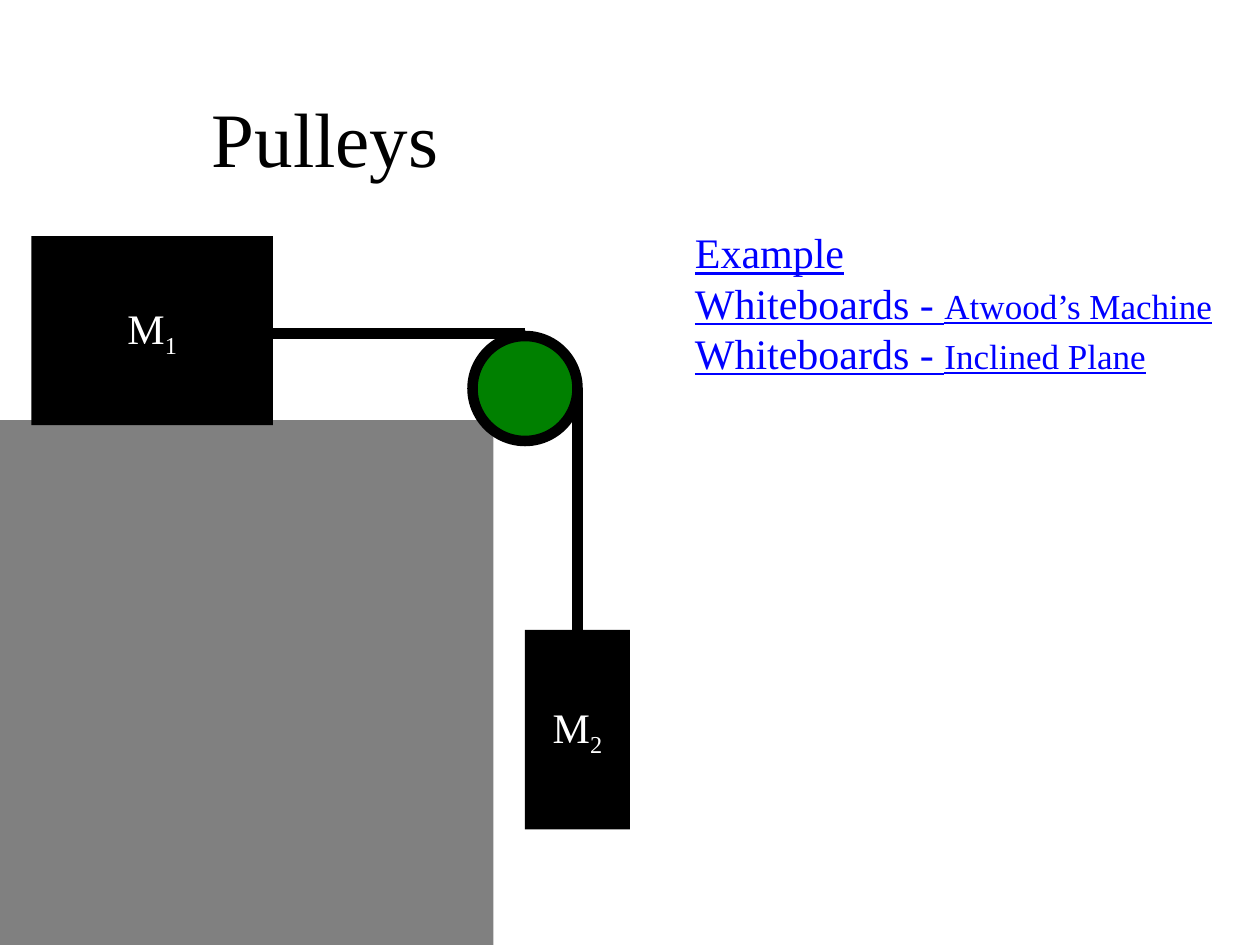
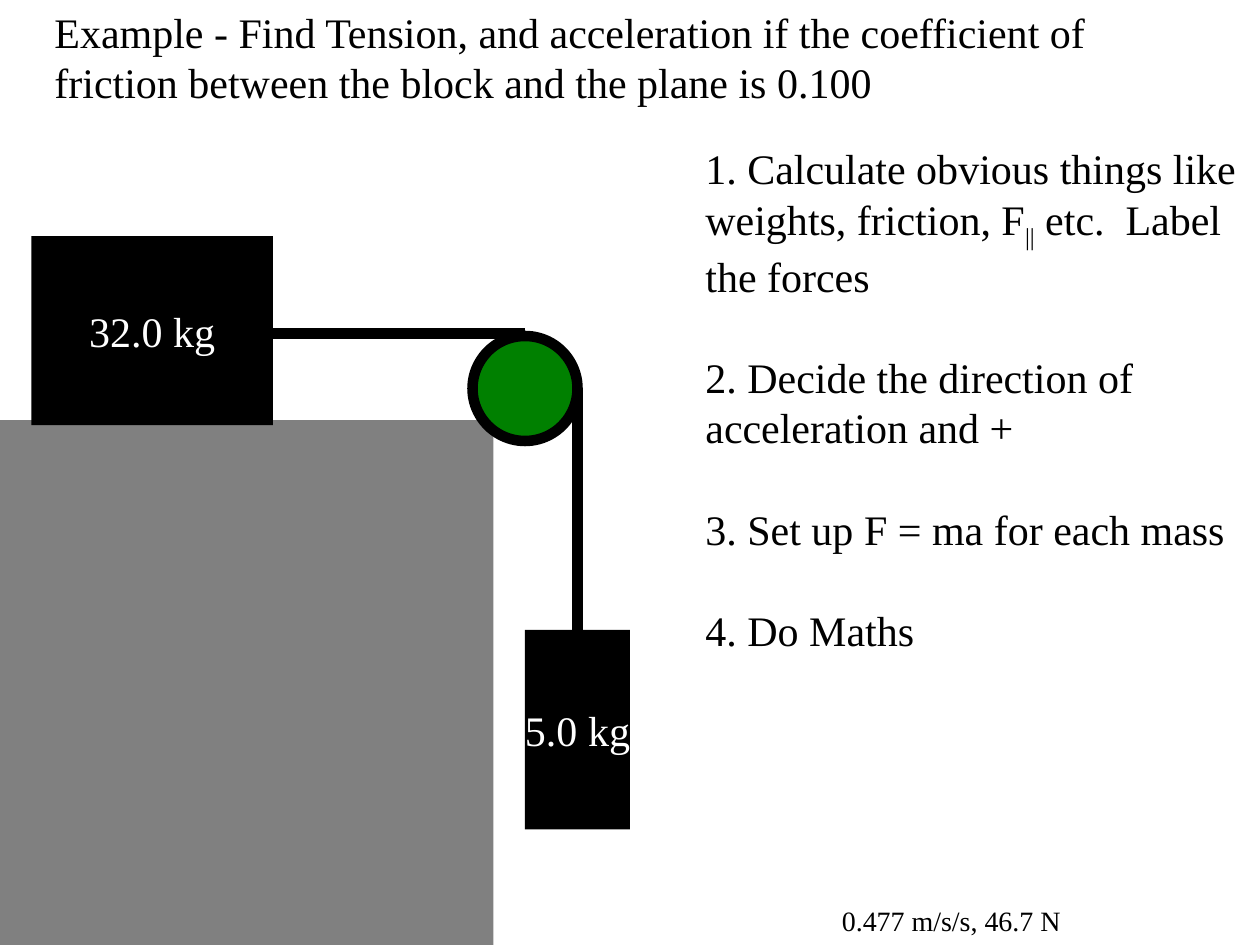
from lxml.etree import SubElement
from pptx import Presentation
from pptx.dml.color import RGBColor
from pptx.enum.shapes import MSO_CONNECTOR, MSO_SHAPE
from pptx.enum.text import MSO_ANCHOR, MSO_AUTO_SIZE, PP_ALIGN
from pptx.oxml.ns import qn
from pptx.util import Emu, Pt

PX = 9525  # 96 px to the inch
FONT = "Times New Roman"
BLACK, WHITE, GRAY, GREEN, BLUE = "000000", "FFFFFF", "808080", "008000", "0000FF"
STROKE = 6
STEP_GAP = 29  # one line of 24 pt text

BODY = {"name": FONT, "size": Pt(24)}
TITLE = {**BODY, "size": Pt(44)}
ANSWER = {**BODY, "size": Pt(16)}
LINK = {**BODY, "underline": True}
SMALL_LINK = {**LINK, "size": Pt(20)}
SUBSCRIPT = {**BODY, "baseline": -25000}


def px(*lengths):
    return [Emu(length * PX) for length in lengths]


def rgb(color):
    return RGBColor.from_string(color)


def add_run(paragraph, text, formats, color):
    run = paragraph.add_run()
    run.text = text
    run.font.color.rgb = rgb(color)
    for name, value in formats.items():
        if name == "baseline":
            run._r.get_or_add_rPr().set(name, str(value))
        else:
            setattr(run.font, name, value)


def fill_text(frame, paragraphs, color, gap=0, alignment=None):
    """Each paragraph is a list of (text, formats) runs."""
    for index, runs in enumerate(paragraphs):
        paragraph = frame.add_paragraph() if index else frame.paragraphs[0]
        paragraph.alignment = alignment
        if index and gap:
            paragraph.space_before = Pt(gap)
        for text, formats in runs:
            add_run(paragraph, text, formats, color)


def add_text(slide, box, paragraphs, color=BLACK, wrap=True, gap=0):
    frame = slide.shapes.add_textbox(*px(*box)).text_frame
    frame.word_wrap = wrap
    frame.auto_size = MSO_AUTO_SIZE.SHAPE_TO_FIT_TEXT
    fill_text(frame, paragraphs, color, gap)


def add_solid(slide, kind, box, fill, outline=None):
    shape = slide.shapes.add_shape(kind, *px(*box))
    shape.shadow.inherit = False
    shape.fill.solid()
    shape.fill.fore_color.rgb = rgb(fill)
    if outline:
        shape.line.color.rgb = rgb(outline)
        shape.line.width = Pt(STROKE)
    else:
        shape.line.fill.background()
    return shape


def add_mass(slide, box, label):
    mass = add_solid(slide, MSO_SHAPE.RECTANGLE, box, BLACK)
    frame = mass.text_frame
    frame.word_wrap = False
    frame.vertical_anchor = MSO_ANCHOR.MIDDLE
    fill_text(frame, [label], WHITE, alignment=PP_ALIGN.CENTER)
    return mass


def add_rope(slide, start_x, start_y, end_x, end_y):
    rope = slide.shapes.add_connector(
        MSO_CONNECTOR.STRAIGHT, *px(start_x, start_y, end_x, end_y))
    rope.line.color.rgb = rgb(BLACK)
    rope.line.width = Pt(STROKE)
    SubElement(rope._element.spPr, qn("a:effectLst"))
    return rope


def add_pulley_system(slide, block_label, hanging_label):
    # Table and pulley
    add_solid(slide, MSO_SHAPE.RECTANGLE, (0, 320, 376, 400), GRAY)
    add_solid(slide, MSO_SHAPE.OVAL, (360, 256, 80, 80), GREEN, BLACK)
    # Masses
    add_mass(slide, (24, 180, 184, 144), block_label)
    hanging_mass = add_mass(slide, (400, 480, 80, 152), hanging_label)
    # Rope over the pulley
    add_rope(slide, 400, 254, 200, 254)
    hanging_rope = add_rope(slide, 440, 296, 440, 480)
    hanging_rope.end_connect(hanging_mass, 0)


def add_blank_slide(presentation):
    return presentation.slides.add_slide(presentation.slide_layouts[6])


def build_overview(presentation):
    slide = add_blank_slide(presentation)
    add_text(slide, (152, 64, 192, 80), [[("Pulleys", TITLE)]], wrap=False)
    topics = [[("Example", LINK)]]
    for topic in ("Atwood’s Machine", "Inclined Plane"):
        topics.append([("Whiteboards - ", LINK), (topic, SMALL_LINK)])
    add_text(slide, (520, 168, 416, 125), topics, BLUE)
    add_pulley_system(slide, [("M", BODY), ("1", SUBSCRIPT)],
                      [("M", BODY), ("2", SUBSCRIPT)])


def build_example(presentation):
    slide = add_blank_slide(presentation)
    add_text(slide, (32, 0, 832, 87), [[(
        "Example - Find Tension, and acceleration if the coefficient of "
        "friction between the block and the plane is 0.100", BODY)]])
    add_pulley_system(slide, [("32.0 kg", BODY)], [("5.0 kg", BODY)])
    # Solution steps and answer
    steps = [
        [("1. Calculate obvious things like weights, friction, F", BODY),
         ("||", SUBSCRIPT), (" etc.  Label the forces", BODY)],
        [("2. Decide the direction of acceleration and +", BODY)],
        [("3. Set up F = ma for each mass", BODY)],
        [("4. Do Maths", BODY)],
    ]
    add_text(slide, (528, 104, 448, 397), steps, gap=STEP_GAP)
    add_text(slide, (632, 684, 188, 36), [[("0.477 m/s/s, 46.7 N", ANSWER)]],
             wrap=False)


def main():
    presentation = Presentation()
    presentation.slide_width, presentation.slide_height = px(960, 720)
    build_overview(presentation)
    build_example(presentation)
    presentation.save("out.pptx")


if __name__ == "__main__":
    main()
